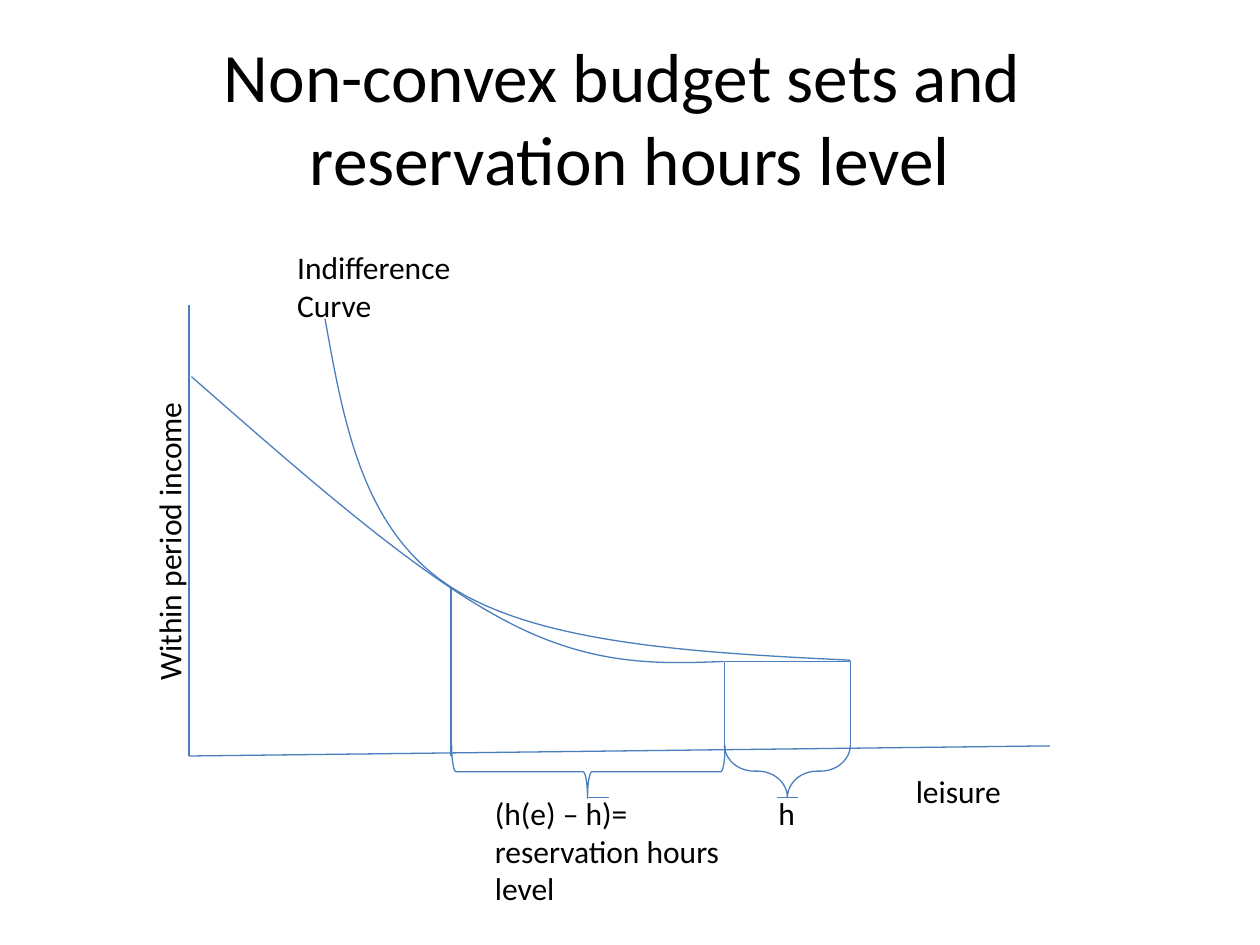
from dataclasses import dataclass, field

from lxml import etree
from pptx import Presentation
from pptx.dml.color import RGBColor
from pptx.enum.shapes import MSO_CONNECTOR, MSO_SHAPE
from pptx.enum.text import MSO_ANCHOR, MSO_AUTO_SIZE, PP_ALIGN
from pptx.oxml.ns import qn
from pptx.util import Inches, Pt

STRAIGHT = MSO_CONNECTOR.STRAIGHT
LEFT_BRACE = MSO_SHAPE.LEFT_BRACE
MIDDLE = MSO_ANCHOR.MIDDLE
GROW = MSO_AUTO_SIZE.SHAPE_TO_FIT_TEXT
LEFT, CENTER = PP_ALIGN.LEFT, PP_ALIGN.CENTER

COLORS = {"line": "4B7EBC", "text": "000000"}


def write_text(text_frame, text, size=18, align=LEFT, font="Calibri", color="text"):
    text_frame.word_wrap = True
    text_frame.text = text
    for paragraph in text_frame.paragraphs:
        paragraph.alignment = align
        for run in paragraph.runs:
            run.font.name = font
            run.font.size = Pt(size)
            run.font.color.rgb = RGBColor.from_string(COLORS[color])


@dataclass
class Diagram:
    slide: object
    line_width: float = 0.75
    colors: dict = field(default_factory=lambda: COLORS)

    def style_line(self, shape):
        shape.line.color.rgb = RGBColor.from_string(self.colors["line"])
        shape.line.width = Pt(self.line_width)

    def title(self, text, left, top, width, height):
        title = self.slide.shapes.title
        title.left, title.top = Inches(left), Inches(top)
        title.width, title.height = Inches(width), Inches(height)
        write_text(title.text_frame, text, size=39.6, align=CENTER)
        title.text_frame.vertical_anchor = MIDDLE

    def line(self, start, end):
        points = [Inches(value) for value in (*start, *end)]
        connector = self.slide.shapes.add_connector(STRAIGHT, *points)
        self.style_line(connector)
        etree.SubElement(connector._element.spPr, qn("a:effectLst"))

    def label(self, text, left, top, width, height, rotation=0):
        box = self.slide.shapes.add_textbox(
            Inches(left), Inches(top), Inches(width), Inches(height))
        box.rotation = rotation
        write_text(box.text_frame, text)
        box.text_frame.auto_size = GROW

    def brace(self, left, top, width, height, rotation, adjustments, flip=False):
        shape = self.slide.shapes.add_shape(
            LEFT_BRACE, Inches(left), Inches(top), Inches(width), Inches(height))
        shape.rotation = rotation
        for index, value in enumerate(adjustments):
            shape.adjustments[index] = value
        if flip:
            shape._element.spPr.find(qn("a:xfrm")).set("flipH", "1")
        shape.fill.background()
        shape.shadow.inherit = False
        self.style_line(shape)

    def curve(self, start, *controls):
        builder = self.slide.shapes.build_freeform(Inches(start[0]), Inches(start[1]))
        builder.add_line_segments(
            [(Inches(x), Inches(y)) for x, y in controls], close=False)
        shape = builder.convert_to_shape()
        segments = list(shape._element.iter(qn("a:lnTo")))
        for index in range(0, len(segments), 3):
            bezier = etree.Element(qn("a:cubicBezTo"))
            segments[index].addprevious(bezier)
            for segment in segments[index:index + 3]:
                bezier.append(segment[0])
                segment.getparent().remove(segment)
        shape.fill.background()
        shape.shadow.inherit = False
        self.style_line(shape)


def main():
    presentation = Presentation()
    presentation.slide_width, presentation.slide_height = Inches(10), Inches(7.5)
    slide = presentation.slides.add_slide(presentation.slide_layouts[5])
    diagram = Diagram(slide)

    origin = (1.5, 6)
    tangency = (3.58, 4.66)
    kink = (5.75, 5.25)
    endowment = (6.75, 5.25)

    diagram.title("Non-convex budget sets and \vreservation hours level", 0.5, 0.3, 9, 1.25)
    diagram.line((1.5, 2.42), origin)
    diagram.line(origin, (8.33, 5.92))
    diagram.line((6.75, 5.92), endowment)
    diagram.line(endowment, kink)
    diagram.curve(kink, (5.22, 5.27), (4.68, 5.29), (3.98, 4.91),
                  (3.27, 4.53), (2.4, 3.76), (1.52, 2.99))
    diagram.line(kink, (kink[0], origin[1]))
    diagram.brace(6.04, 5.62, 0.42, 1, 270, (0.563, 0.5))
    diagram.label("h", 6.08, 6.25, 0.92, 0.4)
    diagram.label("Within period income", -0.16, 3.8, 3, 0.4, rotation=270)
    diagram.label("leisure", 7.17, 6.08, 1, 0.4)
    diagram.curve((6.75, 5.24), (5.51, 5.18), (4.28, 5.11), tangency,
                  (2.88, 4.21), (2.73, 3.37), (2.58, 2.53))
    diagram.line(tangency, (tangency[0], origin[1]))
    diagram.brace(4.46, 5.04, 0.42, 2.17, 90, (0.083, 0.503), flip=True)
    diagram.label("(h(e) – h)=\nreservation hours level", 3.83, 6.25, 2.17, 1.01)
    for bar_left in (6.17, 4.67):
        diagram.line((bar_left, 6.33), (bar_left + 0.16, 6.33))
    diagram.label("Indifference Curve", 2.26, 1.92, 1.49, 0.71)

    presentation.save("out.pptx")


if __name__ == "__main__":
    main()
